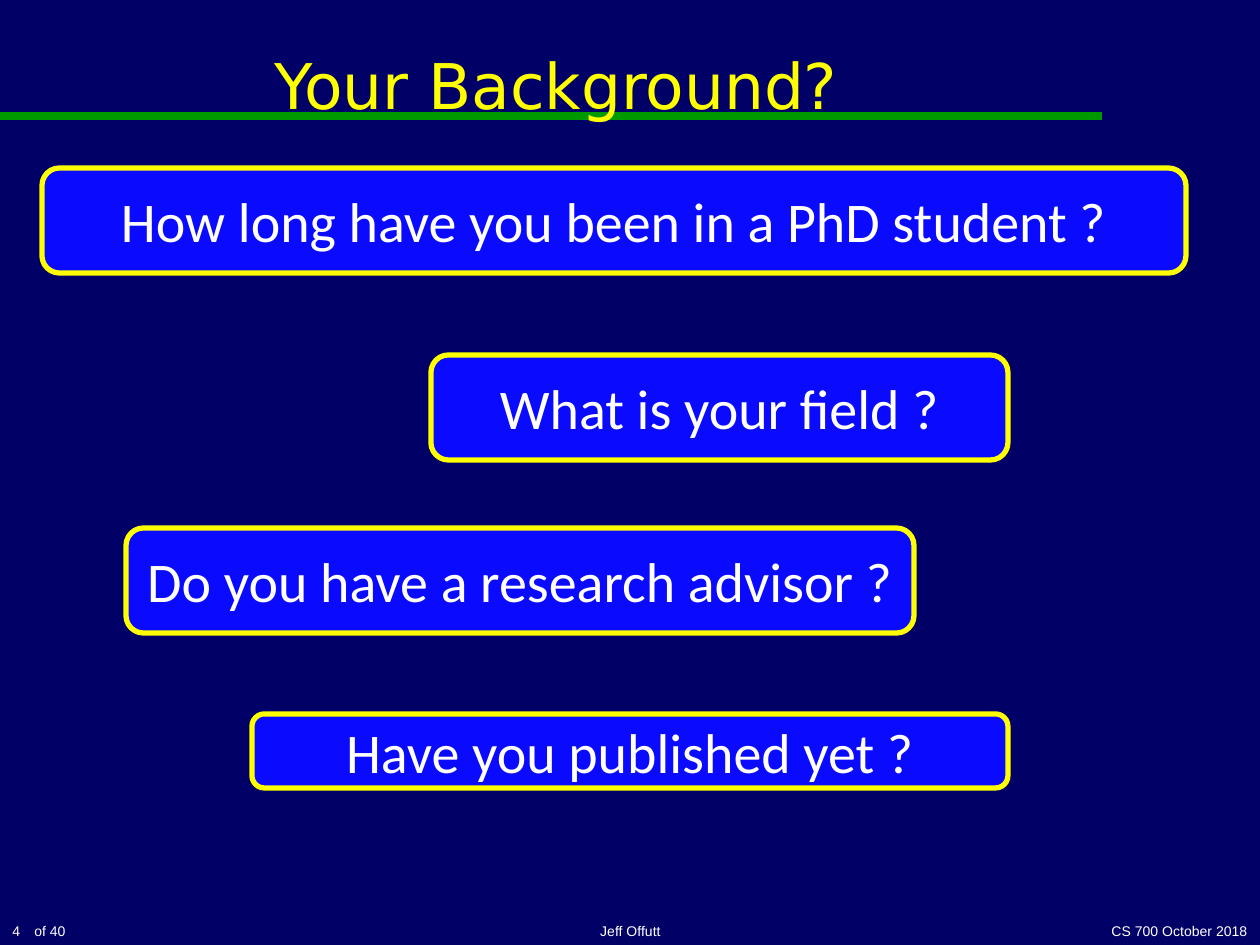
import pptx
import pptx.dml.color
import pptx.enum.shapes
import pptx.enum.text
import pptx.oxml
import pptx.util

EMU_PER_PX = 914400 / 126
SLIDE_BOX = (0, 0, 1260, 945)
ALIGN = pptx.enum.text.PP_ALIGN
ANCHOR = pptx.enum.text.MSO_ANCHOR

NAVY, BLUE, GREEN, YELLOW, WHITE = "000066", "0A0AFF", "009900", "FFFF00", "FFFFFF"

# Left, top, width, height within the questions area, and the wording
QUESTIONS = [
    (42, 0, 1144, 105, "How long have you been in a PhD student ?"),
    (431, 187, 577, 105, "What is your field ?"),
    (126, 360, 788, 105, "Do you have a research advisor ?"),
    (252, 546, 756, 74, "Have you published yet ?"),
]


def px(length):
    return pptx.util.Emu(round(length * EMU_PER_PX))


def color(hex_string):
    return pptx.dml.color.RGBColor.from_string(hex_string)


def write_text(shape, text, font, size, hex_string, align, anchor, wrap=True):
    frame = shape.text_frame
    frame.word_wrap = wrap
    frame.vertical_anchor = anchor
    paragraph = frame.paragraphs[0]
    paragraph.alignment = align
    run = paragraph.add_run()
    run.text = text
    run.font.name = font
    run.font.size = pptx.util.Pt(size)
    run.font.color.rgb = color(hex_string)


def add_text(slide, box, *style, **options):
    shape = slide.shapes.add_textbox(*map(px, box))
    write_text(shape, *style, **options)


def add_header(slide, box):
    left, top, width, height = box
    # Green rule, with the title drawn over it
    rule_y = px(top + 116)
    rule = slide.shapes.add_connector(
        pptx.enum.shapes.MSO_CONNECTOR.STRAIGHT, px(left), rule_y, px(left + width), rule_y)
    rule.line.color.rgb = color(GREEN)
    rule.line.width = pptx.util.Pt(4.5)
    properties = rule.element.spPr
    properties.append(properties.makeelement(pptx.oxml.ns.qn("a:effectLst"), {}))

    add_text(slide, (left + 10, top, width - 10, height), "Your Background?",
             "DejaVu Sans", 36, YELLOW, ALIGN.CENTER, ANCHOR.MIDDLE)


def add_questions(slide, box):
    area_left, area_top = box[:2]
    for left, top, width, height, question in QUESTIONS:
        shape = slide.shapes.add_shape(
            pptx.enum.shapes.MSO_SHAPE.ROUNDED_RECTANGLE,
            px(area_left + left), px(area_top + top), px(width), px(height))
        shape.shadow.inherit = False
        shape.fill.solid()
        shape.fill.fore_color.rgb = color(BLUE)
        shape.line.color.rgb = color(YELLOW)
        shape.line.width = pptx.util.Pt(3)
        write_text(shape, question, "Calibri", 32, WHITE, ALIGN.CENTER, ANCHOR.MIDDLE)


def add_footer(slide, box):
    left, top, width, height = box
    parts = [
        (0, 220, "4", ALIGN.LEFT, True),
        (21, 57, "of 40", ALIGN.RIGHT, False),
        (431, 399, "Jeff Offutt", ALIGN.CENTER, True),
        (width - 262, 262, "CS 700 October 2018", ALIGN.RIGHT, True),
    ]
    for offset, part_width, text, align, wrap in parts:
        add_text(slide, (left + offset, top, part_width, height), text,
                 "Arial", 8, WHITE, align, ANCHOR.BOTTOM, wrap=wrap)


def main():
    presentation = pptx.Presentation()
    presentation.slide_width, presentation.slide_height = map(px, SLIDE_BOX[2:])
    slide = presentation.slides.add_slide(presentation.slide_layouts[6])
    slide.background.fill.solid()
    slide.background.fill.fore_color.rgb = color(NAVY)

    add_header(slide, (0, 0, 1102, 168))
    add_questions(slide, (0, 168, 1260, 620))
    add_footer(slide, (0, 903, 1260, 42))
    presentation.save("out.pptx")


if __name__ == "__main__":
    main()
